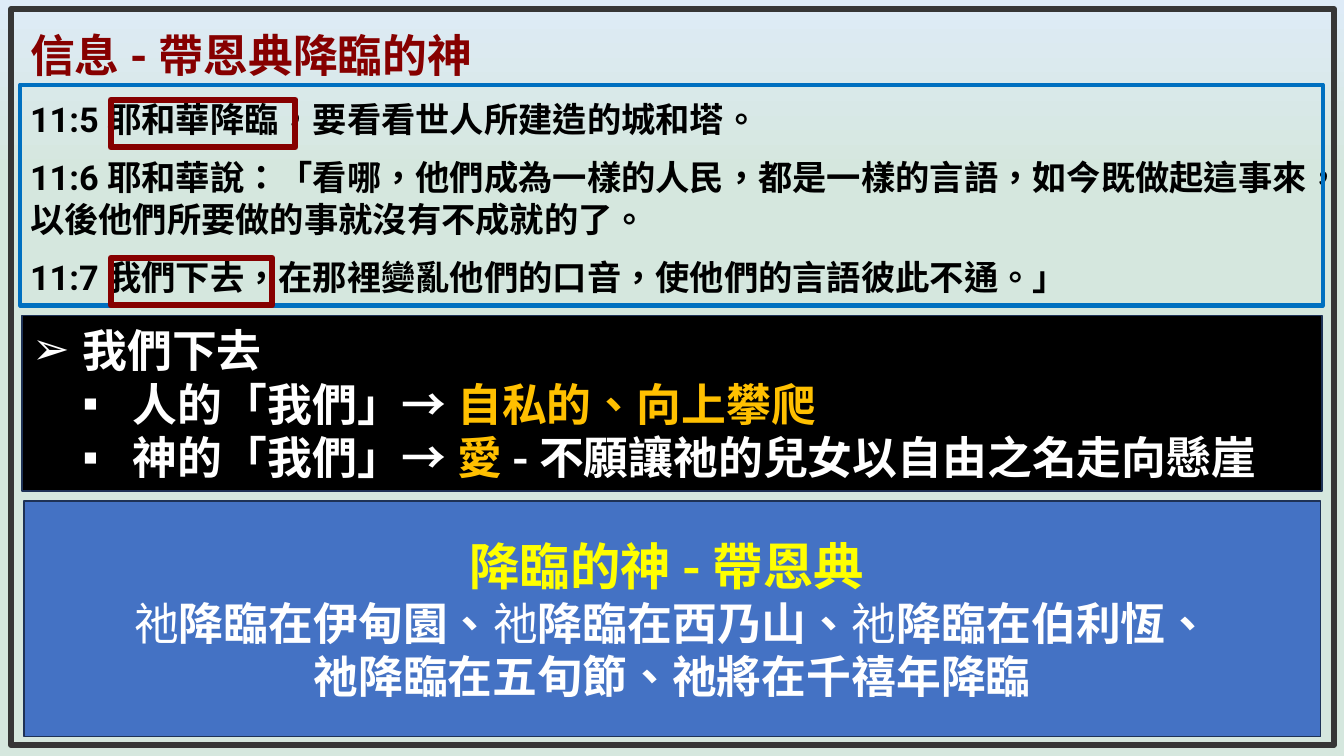
import pptx
import pptx.dml.color
import pptx.enum.lang
import pptx.enum.shapes
import pptx.enum.text
import pptx.oxml
import pptx.oxml.ns
import pptx.util

Inches = pptx.util.Inches
Pt = pptx.util.Pt
ALIGN = pptx.enum.text.PP_ALIGN
ANCHOR = pptx.enum.text.MSO_ANCHOR

WHITE, BLACK, GOLD, YELLOW = "FFFFFF", "000000", "FFC000", "FFFF00"
DARK_RED, NAVY, BLUE = "860000", "1E3256", "4472C4"
SCRIPTURE_FONT, POINT_FONT = "Roboto", "Noto Sans CJK SC"

VERSES = [
    "11:5 耶和華降臨，要看看世人所建造的城和塔。",
    "11:6 耶和華說：「看哪，他們成為一樣的人民，都是一樣的言語，"
    "如今既做起這事來，以後他們所要做的事就沒有不成就的了。",
    "11:7 我們下去，在那裡變亂他們的口音，使他們的言語彼此不通。」",
]
# Each point: bullet, level, runs of (text, colour)
POINTS = [
    ("➢", 0, [("我們下去", WHITE)]),
    ("▪", 1, [("人的「我們」→ ", WHITE), ("自私的、向上攀爬", GOLD)]),
    ("▪", 1, [("神的「我們」→ ", WHITE), ("愛 ", GOLD),
              ("- 不願讓祂的兒女以自由之名走向懸崖", WHITE)]),
]
PLACES = ["降臨在伊甸園、", "降臨在西乃山、", "降臨在伯利恆、"]


def color(hex_value):
    return pptx.dml.color.RGBColor.from_string(hex_value)


def set_background(slide):
    fill = slide.background.fill
    fill.gradient()
    fill.gradient_angle = 270
    stops = [(0, "DEEBF7"), (0.23, "D5E7DE")]
    for stop, (position, hex_value) in zip(fill.gradient_stops, stops):
        stop.position = position
        stop.color.rgb = color(hex_value)


def add_rectangle(slide, bounds, line, width, fill=None):
    box = slide.shapes.add_shape(
        pptx.enum.shapes.MSO_SHAPE.RECTANGLE, *map(Inches, bounds))
    box.shadow.inherit = False
    box.line.color.rgb = color(line)
    box.line.width = Pt(width)
    if fill:
        box.fill.solid()
        box.fill.fore_color.rgb = color(fill)
    else:
        box.fill.background()
    return box


def prepare_frame(box, anchor):
    frame = box.text_frame
    frame.word_wrap = True
    frame.vertical_anchor = anchor
    return frame


def add_paragraph(frame, first, **formats):
    para = frame.paragraphs[0] if first else frame.add_paragraph()
    for name, value in formats.items():
        setattr(para, name, value)
    return para


def add_run(para, text, hex_value, font, size, bold=True):
    span = para.add_run()
    span.text = text
    formats = {
        "name": font, "size": Pt(size), "bold": bold,
        "language_id": pptx.enum.lang.MSO_LANGUAGE_ID.TRADITIONAL_CHINESE,
    }
    for name, value in formats.items():
        setattr(span.font, name, value)
    span.font.color.rgb = color(hex_value)


def set_bullet(para, character, level):
    properties = para._p.get_or_add_pPr()
    properties.set("marL", str(Inches(0.5 * (level + 1))))
    properties.set("indent", str(Inches(-0.5)))
    bullet_font = "Wingdings" if character == "" else "Arial"
    for tag, key, value in (("a:buFont", "typeface", bullet_font),
                            ("a:buChar", "char", character)):
        element = pptx.oxml.parse_xml(
            f'<{tag} {pptx.oxml.ns.nsdecls("a")}/>')
        element.set(key, value)
        properties.append(element)


def add_scripture(slide):
    box = slide.shapes.add_textbox(*map(Inches, (0.2, 0.23, 12.89, 3.04)))
    frame = prepare_frame(box, ANCHOR.TOP)
    title = add_paragraph(frame, True, space_after=Pt(6))
    add_run(title, "信息 - 帶恩典降臨的神", DARK_RED, SCRIPTURE_FONT, 32)
    for verse in VERSES:
        para = add_paragraph(frame, False, space_before=Pt(6), space_after=Pt(6))
        add_run(para, verse, BLACK, SCRIPTURE_FONT, 24.5)


def add_points(slide):
    box = add_rectangle(slide, (0.22, 3.13, 12.89, 1.74), NAVY, 1, BLACK)
    frame = prepare_frame(box, ANCHOR.MIDDLE)
    for index, (bullet, level, runs) in enumerate(POINTS):
        para = add_paragraph(frame, index == 0, alignment=ALIGN.LEFT, level=level)
        set_bullet(para, bullet, level)
        for text, hex_value in runs:
            add_run(para, text, hex_value, POINT_FONT, 32)


def add_conclusion(slide):
    box = add_rectangle(slide, (0.24, 4.97, 12.86, 2.34), NAVY, 1, BLUE)
    frame = prepare_frame(box, ANCHOR.MIDDLE)
    heading, places, ending = [
        add_paragraph(frame, index == 0, alignment=ALIGN.CENTER)
        for index in range(3)]
    add_run(heading, "降臨的神 - 帶恩典 ", YELLOW, POINT_FONT, 36)
    for place in PLACES:
        add_run(places, "祂", WHITE, POINT_FONT, 32, bold=False)
        add_run(places, place, WHITE, POINT_FONT, 32)
    add_run(ending, "祂降臨在五旬節、祂將在千禧年降臨", WHITE, POINT_FONT, 32)


def main():
    deck = pptx.Presentation()
    deck.slide_width, deck.slide_height = Inches(13.33), Inches(7.5)
    slide = deck.slides.add_slide(deck.slide_layouts[6])
    set_background(slide)
    add_scripture(slide)
    add_rectangle(slide, (0.11, 0.09, 13.12, 7.3), "363636", 4.5)
    add_rectangle(slide, (0.2, 0.84, 12.92, 2.19), "0070C0", 3)
    add_points(slide)
    add_conclusion(slide)
    for highlight in ((1.1, 2.56, 1.6, 0.47), (1.1, 0.99, 1.83, 0.47)):
        add_rectangle(slide, highlight, DARK_RED, 4.5)
    deck.save("out.pptx")


if __name__ == "__main__":
    main()
